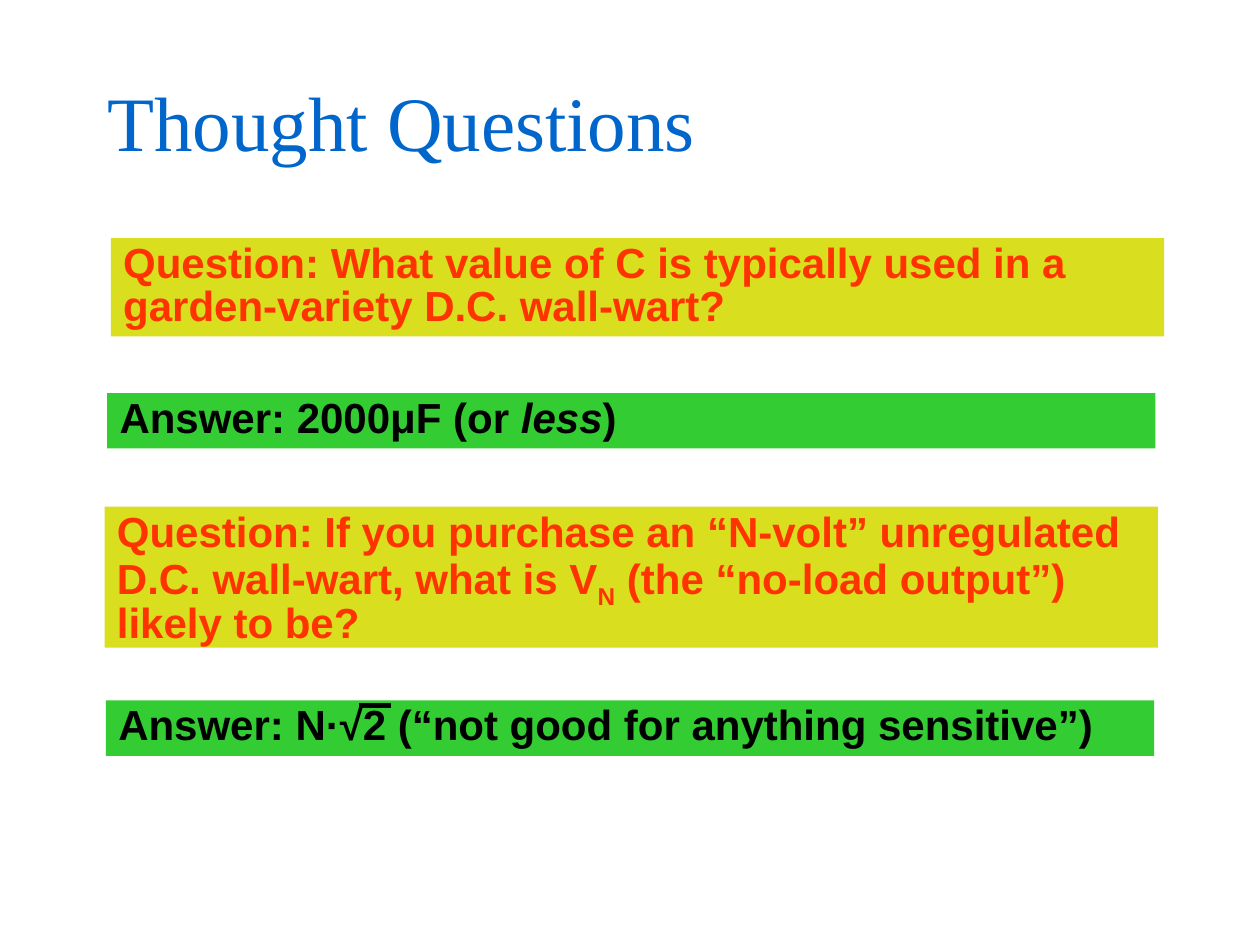
import pptx
import pptx.dml.color
import pptx.enum.shapes
import pptx.enum.text
import pptx.oxml.ns
import pptx.util
from lxml import etree
from pptx.util import Inches

QUESTION = {"fill": "D9DE1E", "text": "FF3300", "width": 8.36}
ANSWER = {"fill": "33CC33", "text": "000000", "width": 8.32}


def colour(value):
    return pptx.dml.color.RGBColor.from_string(value)


def apply_format(target, values):
    for name, value in values.items():
        setattr(target, name, value)


def add_span(para, text, hex_colour, **values):
    span = para.add_run()
    span.text = text
    span.font.color.rgb = colour(hex_colour)
    apply_format(span.font, values)
    return span


def set_title(page, text):
    title = page.shapes.title
    apply_format(title, {
        "left": Inches(0.75), "top": Inches(0.33),
        "width": Inches(8.5), "height": Inches(1.25),
    })
    title.text_frame.vertical_anchor = pptx.enum.text.MSO_ANCHOR.MIDDLE
    para = title.text_frame.paragraphs[0]
    para.alignment = pptx.enum.text.PP_ALIGN.LEFT
    add_span(para, text, "0066CC", name="Times New Roman", size=pptx.util.Pt(44))


def add_panel(page, style, left, top, height, parts):
    box = page.shapes.add_shape(
        pptx.enum.shapes.MSO_SHAPE.RECTANGLE,
        Inches(left), Inches(top), Inches(style["width"]), Inches(height))
    box.shadow.inherit = False
    box.fill.solid()
    box.fill.fore_color.rgb = colour(style["fill"])
    box.line.fill.background()
    apply_format(box.text_frame, {
        "word_wrap": True,
        "vertical_anchor": pptx.enum.text.MSO_ANCHOR.TOP,
    })
    para = box.text_frame.paragraphs[0]
    apply_format(para, {
        "alignment": pptx.enum.text.PP_ALIGN.LEFT, "line_spacing": 0.85,
    })
    for text, kind in parts:
        span = add_span(para, text, style["text"], name="Arial",
                        size=pptx.util.Pt(24), bold=True)
        if kind == "italic":
            span.font.italic = True
        elif kind == "subscript":
            span.font._element.set("baseline", "-25000")


def add_root_bar(page, left, right, top):
    bar = page.shapes.add_connector(
        pptx.enum.shapes.MSO_CONNECTOR.STRAIGHT,
        Inches(left), Inches(top), Inches(right), Inches(top))
    bar.line.color.rgb = colour("000000")
    bar.line.width = pptx.util.Pt(3)
    etree.SubElement(bar._element.spPr, pptx.oxml.ns.qn("a:effectLst"))


def main():
    deck = pptx.Presentation()
    apply_format(deck, {"slide_width": Inches(10), "slide_height": Inches(7.5)})
    page = deck.slides.add_slide(deck.slide_layouts[5])
    set_title(page, "Thought Questions")
    add_panel(page, QUESTION, 0.88, 1.89, 0.78, [
        ("Question: What value of C is typically used in a "
         "garden-variety D.C. wall-wart?", "plain"),
    ])
    add_panel(page, ANSWER, 0.85, 3.12, 0.44, [
        ("Answer: 2000μF (or ", "plain"), ("less", "italic"), (")", "plain"),
    ])
    add_panel(page, QUESTION, 0.83, 4.02, 1.12, [
        ("Question: If you purchase an “N-volt” unregulated "
         "D.C. wall-wart, what is V", "plain"),
        ("N", "subscript"),
        (" (the “no-load output”) likely to be?", "plain"),
    ])
    add_panel(page, ANSWER, 0.84, 5.56, 0.44, [
        ("Answer: N·√2 (“not good for anything sensitive”)", "plain"),
    ])
    add_root_bar(page, 2.85, 3.1, 5.6)
    deck.save("out.pptx")


if __name__ == "__main__":
    main()
